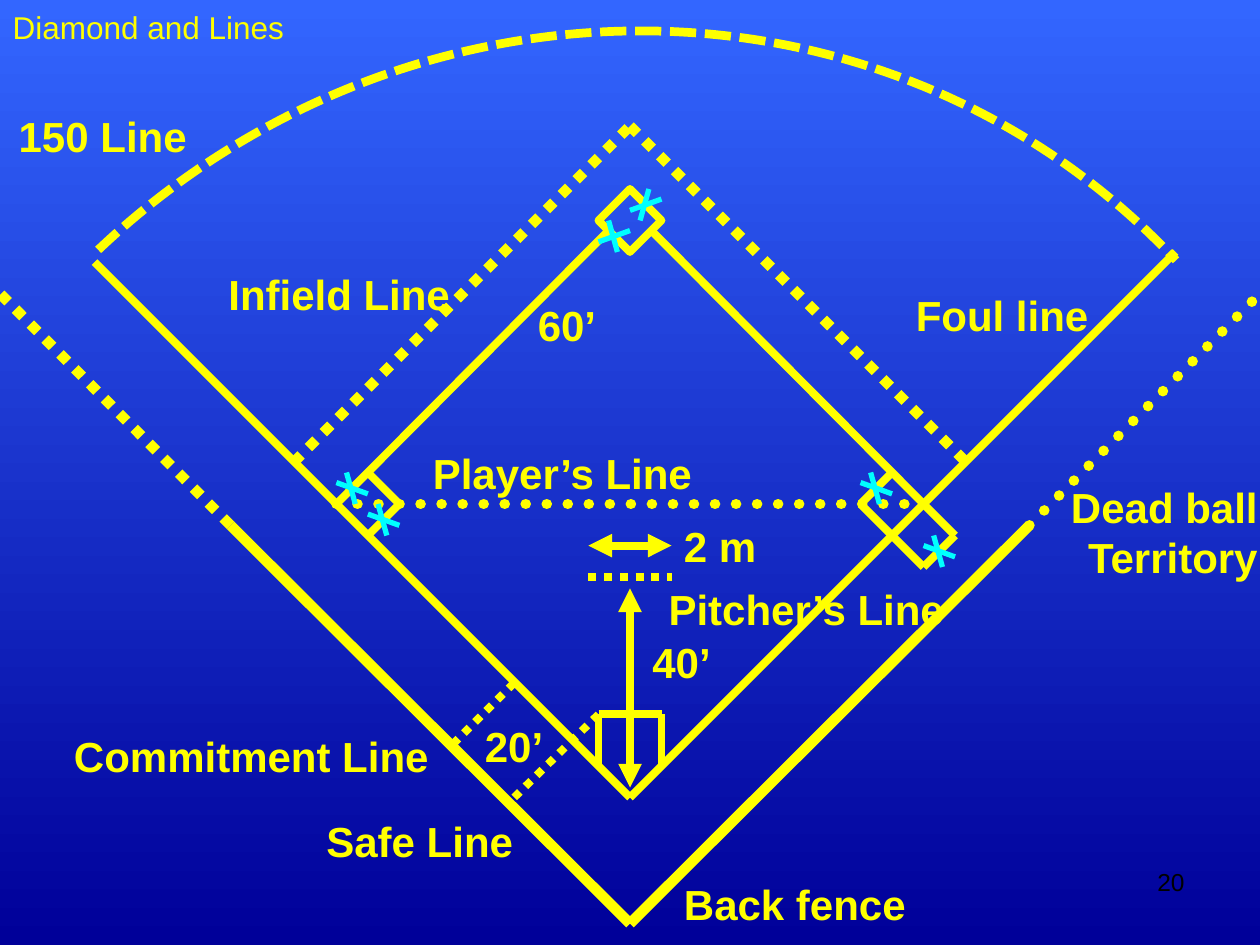
from itertools import pairwise

from lxml import etree
from pptx import Presentation
from pptx.dml.color import RGBColor
from pptx.enum.dml import MSO_LINE
from pptx.enum.shapes import MSO_CONNECTOR, MSO_SHAPE
from pptx.enum.text import MSO_ANCHOR, PP_ALIGN
from pptx.oxml.ns import qn
from pptx.util import Inches, Pt

YELLOW = RGBColor(0xFF, 0xFF, 0x00)
CYAN = RGBColor(0x00, 0xFF, 0xFF)
BLACK = RGBColor(0x00, 0x00, 0x00)
SKY = RGBColor(0x33, 0x66, 0xFF)
NAVY = RGBColor(0x00, 0x00, 0x99)
DOT, DASH = MSO_LINE.ROUND_DOT, MSO_LINE.SQUARE_DOT
STRAIGHT = MSO_CONNECTOR.STRAIGHT
DIAMOND, ARC = MSO_SHAPE.DIAMOND, MSO_SHAPE.ARC
LEFT, RIGHT = PP_ALIGN.LEFT, PP_ALIGN.RIGHT
MIDDLE = MSO_ANCHOR.MIDDLE


class Field:
    """Draws the parts of the field on one slide."""

    font = "Arial"

    def __init__(self, slide):
        self.slide = slide
        self.shapes = slide.shapes

    def back(self, top, base):
        fill = self.slide.background.fill
        fill.gradient()
        fill.gradient_angle = 270
        for stop, color in zip(fill.gradient_stops, (top, base)):
            stop.color.rgb = color

    def style(self, para, size, color, bold, align):
        para.alignment = align
        font = para.font
        font.name, font.size, font.bold = self.font, Pt(size), bold
        font.color.rgb = color

    def title(self, text, x, y, w, h):
        box = self.shapes.title
        box.left, box.top, box.width, box.height = map(Inches, (x, y, w, h))
        frame = box.text_frame
        frame.text = text
        frame.vertical_anchor = MIDDLE
        self.style(frame.paragraphs[0], 18, YELLOW, False, LEFT)

    def label(self, text, x, y, w, h=0.5, align=LEFT, size=24,
              color=YELLOW, bold=True):
        box = self.shapes.add_textbox(*map(Inches, (x, y, w, h)))
        frame = box.text_frame
        frame.word_wrap = True
        frame.text = text
        self.style(frame.paragraphs[0], size, color, bold, align)

    def line(self, start, end, width=4.5, color=YELLOW, dash=None,
             cap=None, arrows=False):
        link = self.shapes.add_connector(
            STRAIGHT, *map(Inches, (*start, *end)))
        link.line.color.rgb = color
        link.line.width = Pt(width)
        if dash:
            link.line.dash_style = dash
        props = link.element.spPr
        pen = props.find(qn("a:ln"))
        if cap:
            pen.set("cap", cap)
        if arrows:
            for tag in ("a:headEnd", "a:tailEnd"):
                etree.SubElement(pen, qn(tag), type="triangle")
        etree.SubElement(props, qn("a:effectLst"))

    def chain(self, *points, width=4.5):
        for start, end in pairwise(points):
            self.line(start, end, width)

    def cross(self, x, y, top=0.08, foot=0.15, left=0.17, right=0.08):
        """Marks a runner or fielder inside a quarter-inch square."""
        self.line((x + top, y), (x + foot, y + 0.25), 3, CYAN)
        self.line((x, y + left), (x + 0.25, y + right), 3, CYAN)

    def outline(self, kind, x, y, w, h, width):
        shape = self.shapes.add_shape(kind, *map(Inches, (x, y, w, h)))
        shape.shadow.inherit = False
        shape.fill.background()
        shape.line.color.rgb = YELLOW
        shape.line.width = Pt(width)
        return shape


def main():
    deck = Presentation()
    deck.slide_width, deck.slide_height = Inches(10), Inches(7.5)
    field = Field(deck.slides.add_slide(deck.slide_layouts[5]))
    field.back(SKY, NAVY)
    field.title("Diamond and Lines", 0, 0, 2.46, 0.42)

    # Back fence, foul lines and base paths
    field.chain((1.83, 4.17), (5, 7.33), (8.17, 4.17), width=6)
    field.chain((0.75, 2.08), (5, 6.33), (9.33, 2))
    field.line((2.67, 4), (4.83, 1.83))
    field.line((7.33, 4), (5.17, 1.83))

    # Dotted lines: infield, players, dead ball
    field.line((2.33, 3.67), (5, 1), 6, dash=DOT)
    field.line((5, 1), (7.67, 3.67), 6, dash=DOT)
    field.line((2.67, 4), (7.33, 4), 6, dash=DOT, cap="rnd")
    field.line((1.83, 4.17), (0, 2.33), 6, dash=DOT)
    field.line((8.17, 4.17), (10, 2.33), 6, dash=DOT, cap="rnd")

    # Dotted lines: safe, commitment, pitcher
    field.line((4.75, 5.67), (4.08, 6.33), dash=DOT)
    field.line((4.08, 5.42), (3.58, 5.92), dash=DOT)
    field.line((4.67, 4.58), (5.33, 4.58), dash=DOT)

    # Home plate and the three bases
    field.chain((4.75, 6.08), (4.75, 5.67), (5.25, 5.67), (5.25, 6.08))
    field.chain((2.92, 3.75), (3.17, 4), (2.92, 4.25))
    field.chain((7.08, 3.75), (6.83, 4), (7.33, 4.5), (7.58, 4.25),
                (7.33, 4))
    field.outline(DIAMOND, 4.75, 1.5, 0.5, 0.5, 4.5)

    # Outfield arc
    arc = field.outline(ARC, -1.3, 0.36, 12.3, 11.83, 5)
    arc.rotation = 316
    arc.adjustments[0], arc.adjustments[1] = 162.31, 0.49
    arc.line.dash_style = DASH

    # Players
    for x, y in ((2.92, 4), (2.67, 3.75), (7.33, 4.25), (6.83, 3.75)):
        field.cross(x, y, left=0.08, right=0.17)
    field.cross(4.75, 1.75)
    field.cross(5, 1.5, top=0.15, foot=0.08)

    # Distances
    field.line((4.67, 4.33), (5.33, 4.33), arrows=True)
    field.line((5, 4.67), (5, 6.25), arrows=True)
    for text, x, y in (("60’", 4.17, 2.33), ("20’", 3.75, 5.67),
                       ("40’", 5.08, 5), ("2 m", 5.33, 4.08)):
        field.label(text, x, y, 0.83)

    # Names of the lines
    field.label("Foul line", 7.17, 2.25, 1.58)
    field.label("Back fence", 5.33, 6.92, 2.17)
    for text, x, y, w in (("150 Line", 0, 0.83, 1.58),
                          ("Infield Line", 1.25, 2.08, 2.42),
                          ("Player’s Line", 3.17, 3.5, 2.42),
                          ("Pitcher’s Line", 5.17, 4.58, 2.42),
                          ("Commitment Line", 0.08, 5.75, 3.42),
                          ("Safe Line", 2.42, 6.42, 1.75)):
        field.label(text, x, y, w, align=RIGHT)
    field.label("Dead ball Territory", 8.25, 3.77, 1.83, 0.9, RIGHT)

    # Page number
    field.label("20", 7.17, 6.83, 2.33, 0.52, RIGHT, 14, BLACK, False)

    deck.save("out.pptx")


if __name__ == "__main__":
    main()
